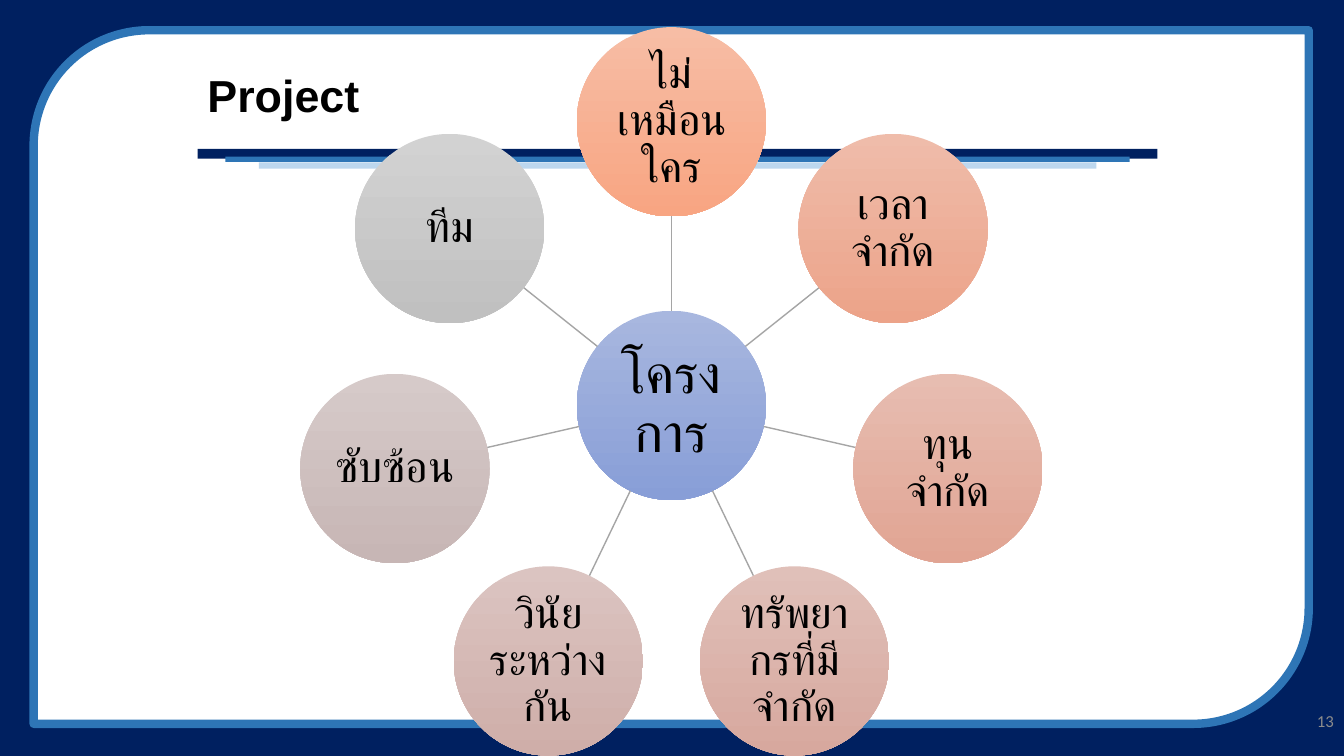
import math

from lxml import etree
from pptx import Presentation
from pptx.dml.color import RGBColor
from pptx.enum import lang, shapes, text
from pptx.oxml.ns import qn
from pptx.util import Pt

NAVY = RGBColor(0x00, 0x20, 0x60)
BLUE = RGBColor(0x2E, 0x75, 0xB6)
PALE_BLUE = RGBColor(0xBD, 0xD7, 0xEE)
WHITE = RGBColor(0xFF, 0xFF, 0xFF)
BLACK = RGBColor(0x00, 0x00, 0x00)
GRAY = RGBColor(0x8C, 0x8C, 0x8C)
SPOKE = RGBColor(0xA5, 0xA5, 0xA5)
HUB_TOP, HUB_BOTTOM = RGBColor(0xA8, 0xB7, 0xDF), RGBColor(0x88, 0x9E, 0xD7)

# Label, top colour and bottom colour, clockwise from the top
TRAITS = [
    ("ไม่เหมือนใคร", RGBColor(0xF7, 0xBD, 0xA5), RGBColor(0xF8, 0xA5, 0x82)),
    ("เวลา จำกัด", RGBColor(0xEF, 0xBC, 0xAA), RGBColor(0xEC, 0xA3, 0x89)),
    ("ทุน จำกัด", RGBColor(0xE7, 0xBD, 0xB1), RGBColor(0xE1, 0xA4, 0x93)),
    ("ทรัพยากรที่มี จำกัด", RGBColor(0xE0, 0xC0, 0xB9), RGBColor(0xD7, 0xA8, 0x9E)),
    ("วินัยระหว่างกัน", RGBColor(0xDB, 0xC4, 0xC1), RGBColor(0xCF, 0xAE, 0xA9)),
    ("ซับซ้อน", RGBColor(0xD6, 0xCA, 0xC9), RGBColor(0xC7, 0xB6, 0xB5)),
    ("ทีม", RGBColor(0xD2, 0xD2, 0xD2), RGBColor(0xC0, 0xC0, 0xC0)),
]
HUB_X, HUB_Y = 479.6, 289.6
ORBIT, RADIUS = 202.6, 67.6

prs = Presentation()
prs.slide_width, prs.slide_height = Pt(960), Pt(540)
slide = prs.slides.add_slide(prs.slide_layouts[6])


def add_circle(label, x, y, size, inset, top, bottom):
    sp = slide.shapes.add_shape(shapes.MSO_SHAPE.OVAL, Pt(x - RADIUS), Pt(y - RADIUS),
                                Pt(2 * RADIUS), Pt(2 * RADIUS))
    sp.shadow.inherit = False
    sp.line.fill.background()
    sp.fill.gradient()
    sp.fill.gradient_angle = 270
    for stop, color in zip(sp.fill.gradient_stops, (top, bottom)):
        stop.color.rgb = color
    sp.fill.gradient_stops[0].position = 0
    sp.fill.gradient_stops[1].position = 1
    tf = sp.text_frame
    tf.margin_left = tf.margin_right = tf.margin_top = tf.margin_bottom = Pt(inset)
    write(tf, label, size, "Calibri", BLACK, text.PP_ALIGN.CENTER)
    tf.paragraphs[0].line_spacing = 0.9
    tf.paragraphs[0].runs[0].font.language_id = lang.MSO_LANGUAGE_ID.THAI


def write(tf, content, size, font, color, align, bold=False):
    """Fill a text frame with one vertically centred paragraph."""
    tf.word_wrap = True
    tf.vertical_anchor = text.MSO_ANCHOR.MIDDLE
    p = tf.paragraphs[0]
    p.text = content
    p.alignment = align
    r = p.runs[0]
    r.font.size, r.font.name, r.font.bold = Pt(size), font, bold
    r.font.color.rgb = color


# Frame and title rules
RECT = shapes.MSO_SHAPE.RECTANGLE
for preset, left, top, width, height, fill, border in [
    (RECT, 0, 0, 960, 540, NAVY, None),
    (shapes.MSO_SHAPE.ROUND_2_DIAG_RECTANGLE, 24, 21.6, 910.8, 495.4, WHITE, BLUE),
    (RECT, 141.1, 106.3, 685.6, 7, NAVY, None),
    (RECT, 161.1, 111.9, 645.8, 3.8, BLUE, None),
    (RECT, 185, 116, 598.2, 4.4, PALE_BLUE, None),
]:
    sp = slide.shapes.add_shape(preset, Pt(left), Pt(top), Pt(width), Pt(height))
    sp.shadow.inherit = False
    sp.fill.solid()
    sp.fill.fore_color.rgb = fill
    if border:
        sp.line.color.rgb = border
        sp.line.width = Pt(6)
    else:
        sp.line.fill.background()

title = slide.shapes.add_textbox(Pt(141.1), Pt(35.3), Pt(685.4), Pt(69.8))
write(title.text_frame, "Project", 32, "Arial", BLACK, text.PP_ALIGN.LEFT, bold=True)
title.text_frame.paragraphs[0].line_spacing = 0.9

number = slide.shapes.add_textbox(Pt(743.8), Pt(500.4), Pt(216), Pt(28.8))
write(number.text_frame, "13", 12, "Calibri", GRAY, text.PP_ALIGN.RIGHT)

# Hub with its ring of traits
add_circle("โครงการ", HUB_X, HUB_Y, 39, 2, HUB_TOP, HUB_BOTTOM)
for i, (label, top, bottom) in enumerate(TRAITS):
    angle = 2 * math.pi * i / len(TRAITS)
    dx, dy = math.sin(angle), -math.cos(angle)
    near, far = RADIUS, ORBIT - RADIUS
    spoke = slide.shapes.add_connector(
        shapes.MSO_CONNECTOR.STRAIGHT,
        Pt(HUB_X + near * dx), Pt(HUB_Y + near * dy),
        Pt(HUB_X + far * dx), Pt(HUB_Y + far * dy))
    spoke.line.color.rgb = SPOKE
    spoke.line.width = Pt(1)
    etree.SubElement(spoke._element.spPr, qn("a:effectLst"))
    add_circle(label, HUB_X + ORBIT * dx, HUB_Y + ORBIT * dy, 31, 1.6, top, bottom)

prs.save("out.pptx")
